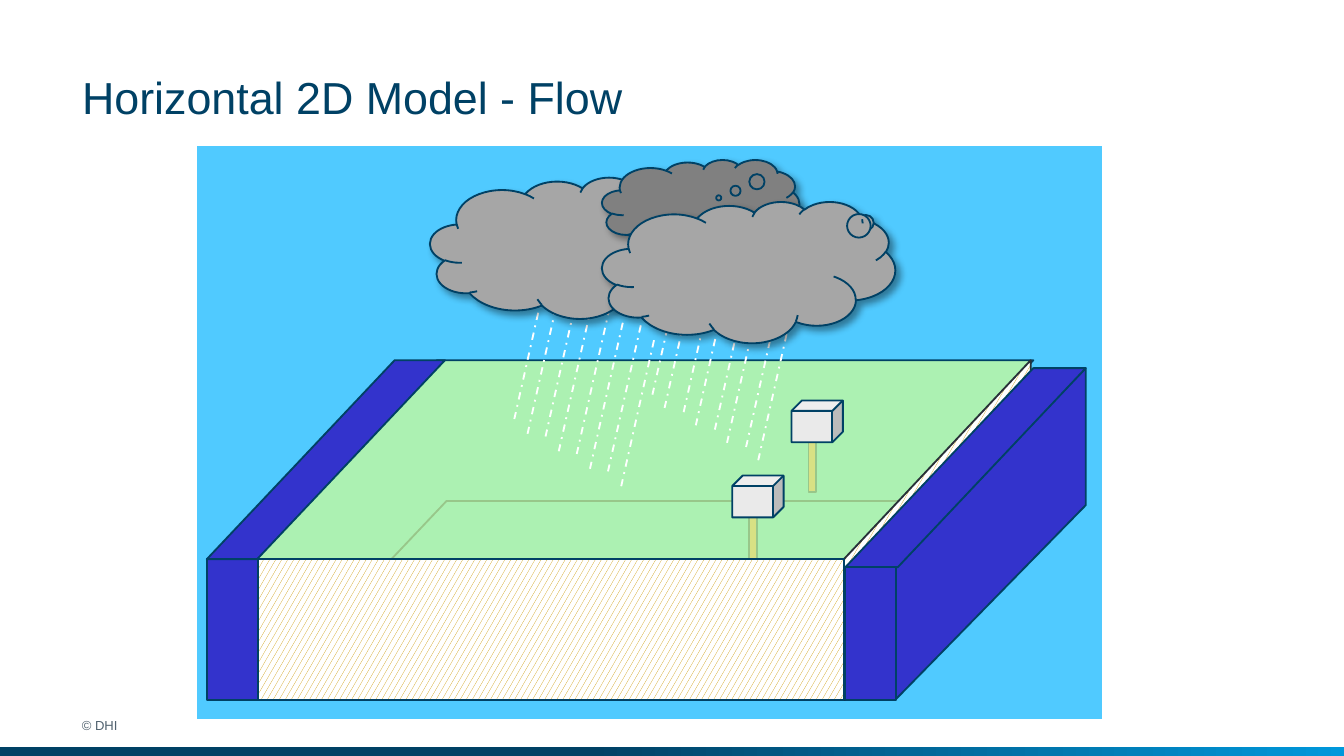
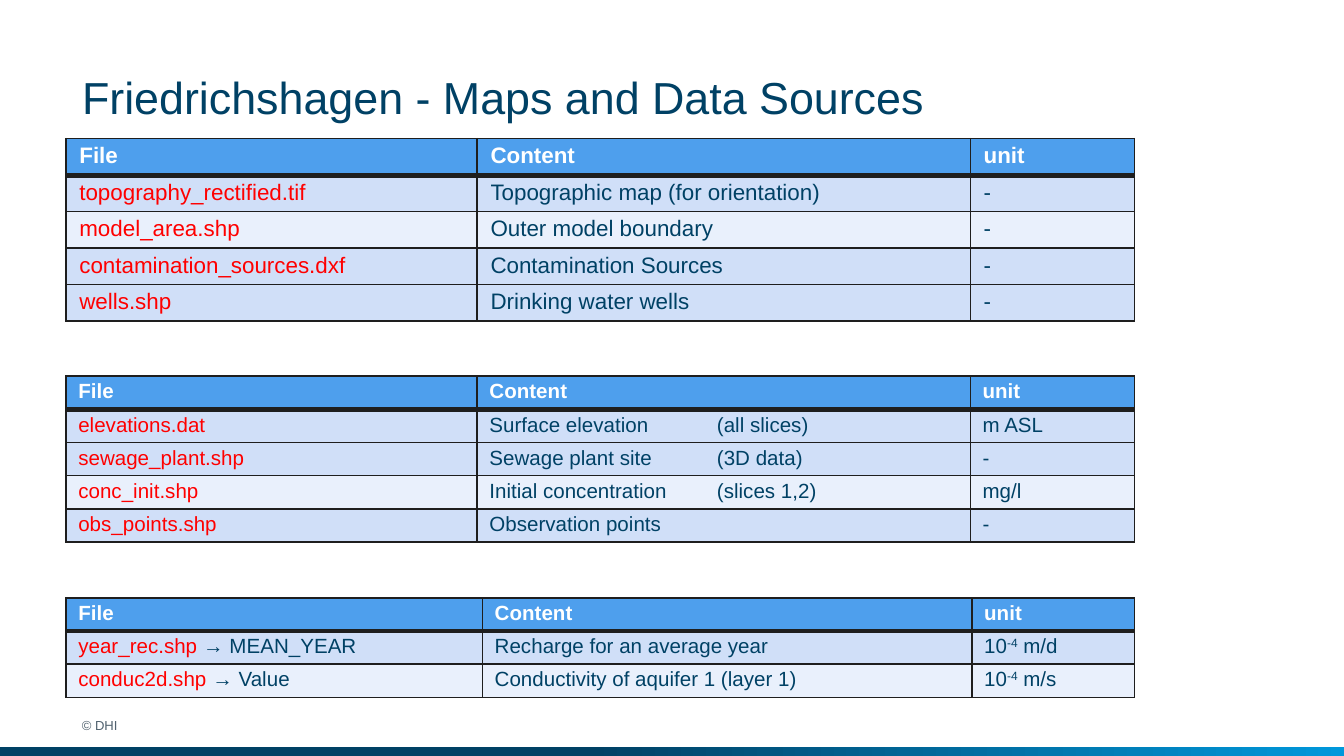
from dataclasses import dataclass
from typing import Any, Optional

from lxml.etree import SubElement
from pptx import Presentation
from pptx.dml.color import RGBColor
from pptx.enum.dml import MSO_LINE, MSO_PATTERN
from pptx.enum.shapes import MSO_CONNECTOR, MSO_SHAPE
from pptx.enum.text import MSO_ANCHOR, MSO_AUTO_SIZE, PP_ALIGN
from pptx.oxml.ns import qn
from pptx.util import Cm, Pt


# Theme
@dataclass(frozen=True)
class Theme:
    font: str = "Arial"
    navy: str = "004165"
    azure: str = "0098DB"
    slate: str = "51626F"
    white: str = "FFFFFF"
    sky: str = "50CAFF"
    water: str = "3333CC"
    grass: str = "CCFF99"
    soil: str = "CC9900"
    soil_edge: str = "283138"
    hidden_edge: str = "002060"
    post: str = "FF8849"
    tank: str = "EAEAEA"
    cloud: str = "A6A6A6"
    dark_cloud: str = "808080"
    header: str = "4E9FED"
    row: str = "D0DFF8"
    pale_row: str = "E9F0FC"
    border: str = "1E1E1E"
    file: str = "FF0000"
    title_size: float = 24
    footer_size: float = 7


THEME = Theme()
SOIL = "soil pattern"
NO_MARGINS = dict(margin_left=0, margin_top=0, margin_right=0, margin_bottom=0)


@dataclass(frozen=True)
class Part:
    kind: MSO_SHAPE
    at: tuple[float, float, float, float]
    fill: Optional[str]
    line: str = THEME.navy
    width: float = 1
    adjust: tuple[float, ...] = ()
    alpha: int = 100
    shadow: bool = False


@dataclass(frozen=True)
class Wall:
    """Side wall running back from a front edge."""
    front: tuple[float, float, float]  # x, top, bottom
    back: tuple[float, float, float]
    fill: str
    line: str


@dataclass(frozen=True)
class Span:
    text: str
    color: str = THEME.navy
    bold: bool = False
    raised: bool = False


@dataclass(frozen=True)
class FileTable:
    top: float
    widths: tuple[float, float, float]
    row_height: float
    size: float
    margins: tuple[float, float]
    rows: list
    pale: tuple[int, ...]


# Shared helpers
def rgb(color: str) -> RGBColor:
    return RGBColor.from_string(color)


def apply(target: Any, values: dict) -> None:
    for name, value in values.items():
        setattr(target, name, value)


def write(para: Any, spans: list[Span], size: float) -> None:
    for item in spans:
        span = para.add_run()
        span.text = item.text
        apply(span.font, dict(name=THEME.font, size=Pt(size), bold=item.bold))
        span.font.color.rgb = rgb(item.color)
        if item.raised:
            span._r.get_or_add_rPr().set("baseline", "30000")


def paint(shape: Any, fill: Optional[str], line: Optional[str], width: float = 1) -> None:
    shape.shadow.inherit = False
    if fill == SOIL:
        shape.fill.patterned()
        shape.fill.pattern = MSO_PATTERN.LARGE_CONFETTI
        shape.fill.fore_color.rgb = rgb(THEME.soil)
        shape.fill.back_color.rgb = rgb(THEME.white)
    elif fill:
        shape.fill.solid()
        shape.fill.fore_color.rgb = rgb(fill)
    else:
        shape.fill.background()
    if line:
        shape.line.color.rgb = rgb(line)
        shape.line.width = Pt(width)
    else:
        shape.line.fill.background()


def add_page(deck: Any, title: str) -> Any:
    """Slide with title, copyright line and gradient band."""
    page = deck.slides.add_slide(deck.slide_layouts[5])
    box = page.shapes.title
    apply(box, dict(left=Cm(1.55), top=Cm(0.48), width=Cm(22.33), height=Cm(1.85)))
    apply(box.text_frame, NO_MARGINS | dict(
        vertical_anchor=MSO_ANCHOR.BOTTOM, word_wrap=True, auto_size=MSO_AUTO_SIZE.NONE))
    para = box.text_frame.paragraphs[0]
    para.alignment = PP_ALIGN.LEFT
    write(para, [Span(title)], THEME.title_size)

    footer = page.shapes.add_textbox(Cm(1.55), Cm(13.56), Cm(3.94), Cm(0.38))
    apply(footer.text_frame, NO_MARGINS | dict(word_wrap=True))
    write(footer.text_frame.paragraphs[0], [Span("© DHI", THEME.slate)], THEME.footer_size)

    band = page.shapes.add_shape(
        MSO_SHAPE.RECTANGLE, 0, Cm(14.13), deck.slide_width, Cm(0.16))
    paint(band, None, None)
    band.fill.gradient()
    band.fill.gradient_angle = 0
    stops = zip(band.fill.gradient_stops, ((0.44, THEME.navy), (1, THEME.azure)))
    for stop, (position, color) in stops:
        stop.position = position
        stop.color.rgb = rgb(color)
    return page


# Drawing of the model
def draw_part(group: Any, part: Part) -> None:
    shape = group.shapes.add_shape(part.kind, *(Cm(value) for value in part.at))
    for index, value in enumerate(part.adjust):
        shape.adjustments[index] = value
    paint(shape, part.fill, part.line, part.width)
    properties = shape._element.spPr
    if part.alpha < 100:
        color = properties.find(f"{qn('a:solidFill')}/{qn('a:srgbClr')}")
        SubElement(color, qn("a:alpha"), val=str(part.alpha * 1000))
    if part.shadow:
        effects = properties.find(qn("a:effectLst"))
        outer = SubElement(effects, qn("a:outerShdw"), blurRad=str(Pt(4)),
                           dist=str(Pt(3)), dir="2700000", algn="tl", rotWithShape="0")
        color = SubElement(outer, qn("a:srgbClr"), val="000000")
        SubElement(color, qn("a:alpha"), val="40000")


def draw_wall(group: Any, wall: Wall) -> None:
    (near, near_top, near_bottom), (far, far_top, far_bottom) = wall.front, wall.back
    outline = group.shapes.build_freeform(Cm(near), Cm(near_top))
    corners = ((far, far_top), (far, far_bottom), (near, near_bottom))
    outline.add_line_segments([(Cm(x), Cm(y)) for x, y in corners], close=True)
    paint(outline.convert_to_shape(), wall.fill, wall.line)


def draw_rain(group: Any, x: float, y: float) -> None:
    """Four slanted drops, each one a step right and down."""
    for index in range(4):
        left, top = x + 0.59 * index, y + 0.33 * index
        drop = group.shapes.add_connector(
            MSO_CONNECTOR.STRAIGHT, Cm(left), Cm(top), Cm(left - 0.62), Cm(top + 2.76))
        drop.line.color.rgb = rgb(THEME.white)
        apply(drop.line, dict(width=Pt(1), dash_style=MSO_LINE.DASH_DOT))
        SubElement(drop._element.spPr, qn("a:effectLst"))


WELLS = ((14.96, 7.57), (13.84, 8.99))
RAIN = ((10.59, 5.44), (10.34, 5.16), (13.18, 4.95), (12.95, 4.7))
BOX, SLANT, CLOUD = MSO_SHAPE.RECTANGLE, MSO_SHAPE.PARALLELOGRAM, MSO_SHAPE.CLOUD_CALLOUT
BIG_TAIL = (0.399, -0.348)

GROUND = [
    Part(BOX, (3.71, 2.74, 17.14, 10.87), THEME.sky, THEME.white, 0.75),
    Part(SLANT, (4.88, 9.47, 14.81, 3.76), None, THEME.hidden_edge, adjust=(0.947,)),
    *(Part(BOX, (x + 0.32, y + 0.79, 0.15, 0.94), THEME.post, THEME.hidden_edge)
      for x, y in WELLS),
    Part(SLANT, (4.7, 6.81, 14.83, 3.76), THEME.grass, adjust=(0.947,), alpha=75),
    Wall((15.95, 10.57, 13.23), (19.48, 6.81, 9.47), SOIL, THEME.soil_edge),
    *(Part(MSO_SHAPE.CUBE, (x, y, 0.97, 0.79), THEME.tank, adjust=(0.25,))
      for x, y in WELLS),
    Part(BOX, (4.88, 10.57, 11.07, 2.66), SOIL),
    Part(BOX, (3.91, 10.57, 0.97, 2.66), THEME.water),
    Part(SLANT, (3.91, 6.81, 4.5, 3.76), THEME.water, adjust=(0.944,)),
    Wall((16.92, 10.62, 13.23), (20.52, 6.96, 9.55), THEME.water, THEME.navy),
    Part(SLANT, (15.98, 6.96, 4.54, 3.76), THEME.water, adjust=(0.944,)),
]
FOREGROUND = [
    Part(CLOUD, (8.13, 3.35, 5.54, 2.67), THEME.cloud, adjust=BIG_TAIL, shadow=True),
    Part(CLOUD, (11.38, 3.02, 3.73, 1.73), THEME.dark_cloud,
         adjust=(0.091, -0.083), shadow=True),
    Part(CLOUD, (11.38, 3.81, 5.54, 2.67), THEME.cloud, adjust=BIG_TAIL, shadow=True),
    Part(BOX, (15.98, 10.72, 0.96, 2.51), THEME.water),
]


def draw_model(page: Any) -> None:
    group = page.shapes.add_group_shape()
    for item in GROUND:
        if isinstance(item, Wall):
            draw_wall(group, item)
        else:
            draw_part(group, item)
    for x, y in RAIN:
        draw_rain(group, x, y)
    for item in FOREGROUND:
        draw_part(group, item)


# File tables
def power_unit(unit: str) -> list[Span]:
    return [Span("10"), Span("-4", raised=True), Span(f" {unit}")]


SMALL = dict(row_height=0.61, size=11, margins=(0.23, 0.08))
TABLES = [
    FileTable(2.62, (7.77, 9.32, 3.1), 0.66, 12, (0.25, 0.09), [
        ("topography_rectified.tif", "", "Topographic map (for orientation)", "-"),
        ("model_area.shp", "", "Outer model boundary", "-"),
        ("contamination_sources.dxf", "", "Contamination Sources", "-"),
        ("wells.shp", "", "Drinking water wells", "-")], pale=(2,)),
    FileTable(7.11, (7.77, 9.32, 3.1), **SMALL, rows=[
        ("elevations.dat", "", "Surface elevation\t(all slices)", "m ASL"),
        ("sewage_plant.shp", "", "Sewage plant site\t(3D data)", "-"),
        ("conc_init.shp", "", "Initial concentration\t(slices 1,2)", "mg/l"),
        ("obs_points.shp", "", "Observation points", "-")], pale=(3,)),
    FileTable(11.3, (7.87, 9.25, 3.07), **SMALL, rows=[
        ("year_rec.shp ", "→ MEAN_YEAR", "Recharge for an average year", power_unit("m/d")),
        ("conduc2d.shp ", "→ Value", "Conductivity of aquifer 1 (layer 1)",
         power_unit("m/s"))], pale=(2,)),
]


def add_borders(cell: Any, row: int) -> None:
    heavy = {0: "B", 1: "T"}.get(row)
    for side in "LRTB":
        width = Pt(3 if side == heavy else 1)
        line = SubElement(cell._tc.get_or_add_tcPr(), qn(f"a:ln{side}"), w=str(width))
        SubElement(SubElement(line, qn("a:solidFill")), qn("a:srgbClr"), val=THEME.border)


def add_tab(para: Any, position: float) -> None:
    tabs = SubElement(para._p.get_or_add_pPr(), qn("a:tabLst"))
    SubElement(tabs, qn("a:tab"), pos=str(Cm(position)), algn="l")


def draw_table(page: Any, data: FileTable) -> None:
    lines = [[[Span(text, THEME.white, bold=True)] for text in ("File", "Content", "unit")]]
    for file, field, content, unit in data.rows:
        first = [Span(file, THEME.file)] + ([Span(field)] if field else [])
        lines.append([first, [Span(content)], [Span(unit)] if isinstance(unit, str) else unit])

    frame = page.shapes.add_table(
        len(lines), 3, Cm(1.25), Cm(data.top), Cm(sum(data.widths)),
        Cm(data.row_height * len(lines)))
    table = frame.table
    table.horz_banding = False
    for column, width in zip(table.columns, data.widths):
        column.width = Cm(width)
    side, edge = (Cm(value) for value in data.margins)
    for row, line in enumerate(lines):
        table.rows[row].height = Cm(data.row_height)
        color = THEME.pale_row if row in data.pale else THEME.row
        for column, spans in enumerate(line):
            cell = table.cell(row, column)
            apply(cell, dict(margin_left=side, margin_right=side,
                             margin_top=edge, margin_bottom=edge))
            add_borders(cell, row)
            cell.fill.solid()
            cell.fill.fore_color.rgb = rgb(color if row else THEME.header)
            para = cell.text_frame.paragraphs[0]
            if "\t" in spans[0].text:
                add_tab(para, 4.3)
            write(para, spans, data.size)


def main() -> None:
    deck = Presentation()
    apply(deck, dict(slide_width=Cm(25.4), slide_height=Cm(14.29)))
    draw_model(add_page(deck, "Horizontal 2D Model - Flow"))
    page = add_page(deck, "Friedrichshagen - Maps and Data Sources")
    for data in TABLES:
        draw_table(page, data)
    deck.save("out.pptx")


if __name__ == "__main__":
    main()
